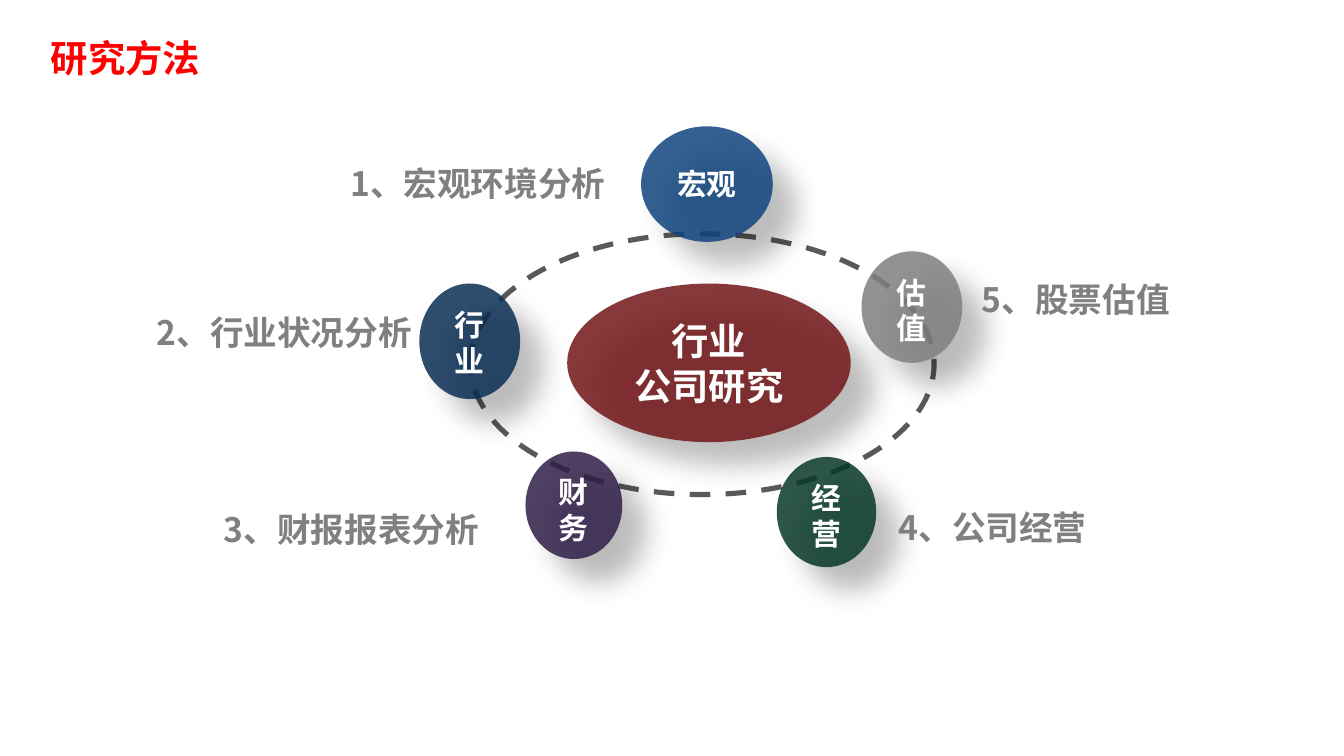
"""Build the research method slide: a dashed ring of five topics around a core."""
from dataclasses import dataclass

from lxml.etree import SubElement
from pptx import Presentation
from pptx.dml.color import RGBColor
from pptx.enum.dml import MSO_LINE
from pptx.enum.shapes import MSO_SHAPE
from pptx.enum.text import MSO_ANCHOR, PP_ALIGN
from pptx.oxml import parse_xml
from pptx.oxml.ns import nsdecls, qn
from pptx.util import Inches, Pt


@dataclass(frozen=True)
class Theme:
    font: str = "Noto Sans CJK SC"
    title: str = "FF0000"
    label: str = "808080"
    light: str = "FFFFFF"
    ring: str = "595959"
    core: str = "731618"
    macro: str = "10457E"
    industry: str = "0B2E54"
    finance: str = "301F48"
    operation: str = "083926"
    valuation: str = "808080"
    large: int = 20
    medium: int = 18
    small: int = 16


theme = Theme()


def write_text(shape, text, *, size, color, align=PP_ALIGN.CENTER, anchor=MSO_ANCHOR.TOP):
    frame = shape.text_frame
    frame.word_wrap = True
    frame.vertical_anchor = anchor
    for index, line in enumerate(text.split("\n")):
        para = frame.paragraphs[0] if index == 0 else frame.add_paragraph()
        para.alignment = align
        span = para.add_run()
        span.text = line
        span.font.size = Pt(size)
        span.font.bold = True
        span.font.name = theme.font
        span.font.color.rgb = RGBColor.from_string(color)
        SubElement(span.font._element, qn("a:ea"), typeface=theme.font)


deck = Presentation()
deck.slide_width = Inches(10)
deck.slide_height = Inches(10 * 9 / 16)
page = deck.slides.add_slide(deck.slide_layouts[6])

ring = page.shapes.add_shape(
    MSO_SHAPE.OVAL, Inches(3.5), Inches(1.74), Inches(3.45), Inches(1.94)
)
ring.shadow.inherit = False
ring.fill.background()
ring.line.color.rgb = RGBColor.from_string(theme.ring)
ring.line.width = Pt(2.75)
ring.line.dash_style = MSO_LINE.DASH

ovals = [
    ("行业\n公司研究", 4.22, 2.11, 2.11, 1.18, theme.core, theme.large, MSO_ANCHOR.MIDDLE),
    ("行业", 3.12, 2.11, 0.75, 0.86, theme.industry, theme.small, MSO_ANCHOR.TOP),
    ("财务", 3.91, 3.36, 0.72, 0.8, theme.finance, theme.small, MSO_ANCHOR.TOP),
    ("经营", 5.78, 3.4, 0.74, 0.82, theme.operation, theme.small, MSO_ANCHOR.TOP),
    ("估值", 6.41, 1.87, 0.75, 0.83, theme.valuation, theme.small, MSO_ANCHOR.TOP),
    ("宏观", 4.77, 0.94, 0.98, 0.86, theme.macro, theme.small, MSO_ANCHOR.MIDDLE),
]
for text, left, top, width, height, color, size, anchor in ovals:
    oval = page.shapes.add_shape(
        MSO_SHAPE.OVAL, Inches(left), Inches(top), Inches(width), Inches(height)
    )
    oval.fill.solid()
    oval.fill.fore_color.rgb = RGBColor.from_string(color)
    oval.line.fill.background()
    properties = oval._element.spPr
    SubElement(properties.find(".//" + qn("a:srgbClr")), qn("a:alpha"), val="85000")
    properties.append(parse_xml(
        f'<a:effectLst {nsdecls("a")}>'
        f'<a:outerShdw blurRad="{Pt(15)}" dist="{Pt(18)}" dir="2700000" algn="tl" rotWithShape="0">'
        '<a:srgbClr val="000000"><a:alpha val="30000"/></a:srgbClr>'
        '</a:outerShdw></a:effectLst>'
    ))
    write_text(oval, text, size=size, color=theme.light, anchor=anchor)

labels = [
    ("1、宏观环境分析", 2.27, 1.16),
    ("2、行业状况分析", 0.83, 2.27),
    ("3、财报报表分析", 1.33, 3.74),
    ("5、股票估值", 6.72, 2.03),
    ("4、公司经营", 6.1, 3.72),
]
for text, left, top in labels:
    box = page.shapes.add_textbox(Inches(left), Inches(top), Inches(2.57), Inches(0.4))
    write_text(box, text, size=theme.medium, color=theme.label)

title = page.shapes.add_textbox(Inches(0.28), Inches(0.21), Inches(4.25), Inches(0.47))
write_text(title, "研究方法", size=theme.large, color=theme.title, align=PP_ALIGN.LEFT)

deck.save("out.pptx")
